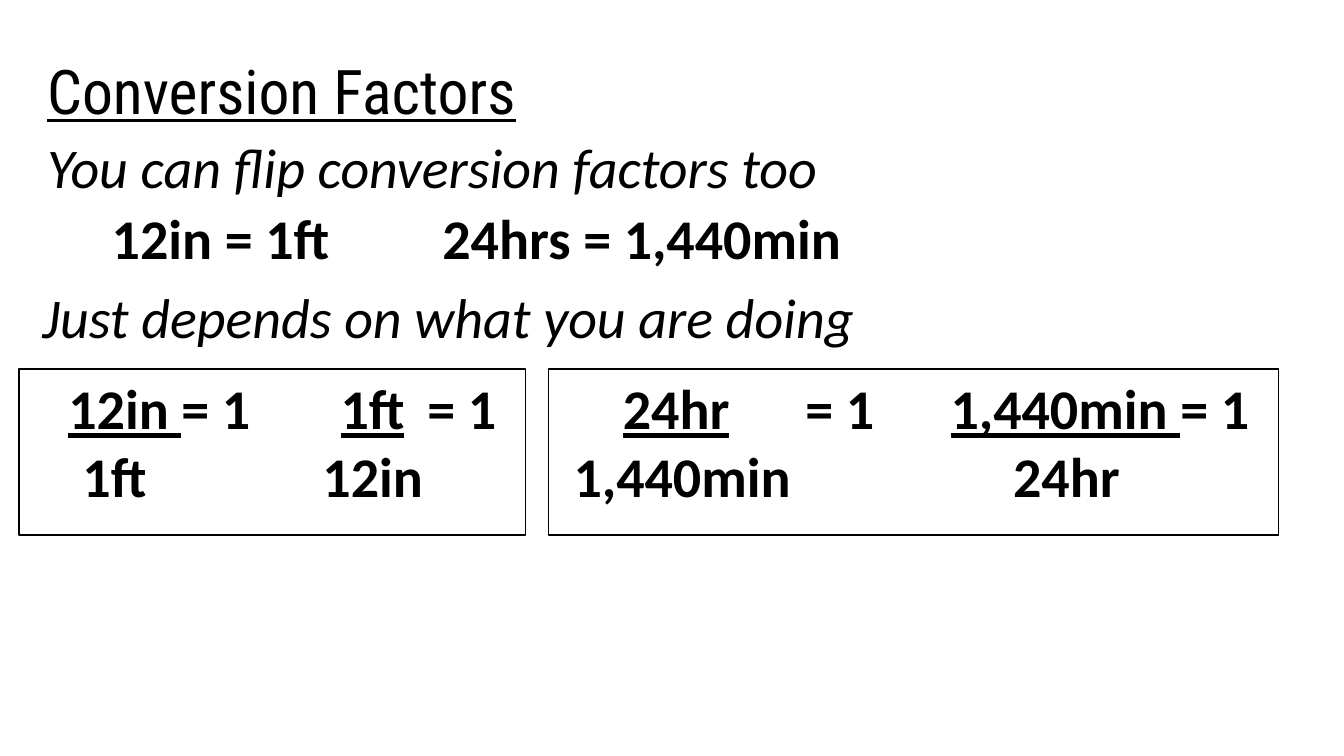
import pptx
import pptx.util
import pptx.dml.color
import pptx.enum.shapes
import pptx.enum.text
from lxml import etree

Inches, Pt = pptx.util.Inches, pptx.util.Pt
COLORS = {"ink": "000000", "paper": "FFFFFF"}
BODY_FONT, TITLE_FONT = "Calibri", "Roboto Condensed"

# Each run: text, underlined
TITLE = [("Conversion Factors", True)]
FLIP_NOTE = [("You can flip conversion factors too", False)]
EQUALITIES = [("12in = 1ft\t24hrs = 1,440min", False)]
DEPENDS_NOTE = [("Just depends on what you are doing", False)]
NUMERATORS = [
    ("\t12in ", True), ("= 1\t", False),
    ("\t1ft\t", True), ("= 1\t", False),
    ("\t24hr\t", True), ("= 1\t", False),
    ("1,440min ", True), ("= 1", False),
]
DENOMINATORS = [("\t1ft\t12in\t1,440min\t24hr", False)]

# Tab stops in inches from the start of the text
EQUALITY_TABS = [3.28]
NUMERATOR_TABS = [0.26, 2.56, 2.96, 3.82, 5.39, 5.76, 7.57, 9.01]
DENOMINATOR_TABS = [0.4, 2.78, 5.27, 9.63]

FRAME_TOP, FRAME_HEIGHT = 3.66, 1.65
FRAMES = [(0.19, 5.02), (5.44, 7.24)]  # left, width


def rgb(name):
    return pptx.dml.color.RGBColor.from_string(COLORS[name])


def add_text_box(slide, left, top, width, height, middle=False):
    frame = slide.shapes.add_textbox(
        Inches(left), Inches(top), Inches(width), Inches(height)).text_frame
    frame.word_wrap = True
    if middle:
        frame.vertical_anchor = pptx.enum.text.MSO_ANCHOR.MIDDLE
    return frame


def set_tabs(paragraph, stops):
    properties = paragraph._p.get_or_add_pPr()
    namespace = properties.nsmap["a"]
    tab_list = etree.SubElement(properties, f"{{{namespace}}}tabLst")
    for stop in stops:
        etree.SubElement(tab_list, f"{{{namespace}}}tab",
                         pos=str(Inches(stop)), algn="l")


def write(paragraph, runs, size=40, font=BODY_FONT, bold=False, italic=False, tabs=()):
    if tabs:
        set_tabs(paragraph, tabs)
    for text, underlined in runs:
        run = paragraph.add_run()
        run.text = text
        run.font.size = Pt(size)
        run.font.name = font
        run.font.bold = bold
        run.font.italic = italic
        run.font.underline = underlined
        run.font.color.rgb = rgb("ink")


def add_frame(slide, left, width):
    frame = slide.shapes.add_shape(
        pptx.enum.shapes.MSO_SHAPE.RECTANGLE,
        Inches(left), Inches(FRAME_TOP), Inches(width), Inches(FRAME_HEIGHT))
    frame.shadow.inherit = False
    frame.fill.background()
    frame.line.color.rgb = rgb("ink")
    frame.line.width = Pt(1)


def main():
    deck = pptx.Presentation()
    deck.slide_width, deck.slide_height = Inches(13.33), Inches(7.5)
    slide = deck.slides.add_slide(deck.slide_layouts[6])
    slide.background.fill.solid()
    slide.background.fill.fore_color.rgb = rgb("paper")

    title = add_text_box(slide, 0.37, 0.21, 11.5, 1.45, middle=True).paragraphs[0]
    title.line_spacing = 0.9
    write(title, TITLE, size=44, font=TITLE_FONT)

    flip_note = add_text_box(slide, 0.37, 1.34, 11.5, 3.6).paragraphs[0]
    flip_note.line_spacing = 0.9
    flip_note.space_before = Pt(10)
    write(flip_note, FLIP_NOTE, italic=True)

    equalities = add_text_box(slide, 1.01, 1.97, 7.53, 0.77).paragraphs[0]
    write(equalities, EQUALITIES, bold=True, tabs=EQUALITY_TABS)

    depends_note = add_text_box(slide, 0.32, 2.75, 8.35, 0.77).paragraphs[0]
    write(depends_note, DEPENDS_NOTE, italic=True)

    fractions = add_text_box(slide, 0.32, FRAME_TOP, 12.36, 1.45)
    write(fractions.paragraphs[0], NUMERATORS, bold=True, tabs=NUMERATOR_TABS)
    write(fractions.add_paragraph(), DENOMINATORS, bold=True, tabs=DENOMINATOR_TABS)

    for left, width in FRAMES:
        add_frame(slide, left, width)

    deck.save("out.pptx")


if __name__ == "__main__":
    main()
